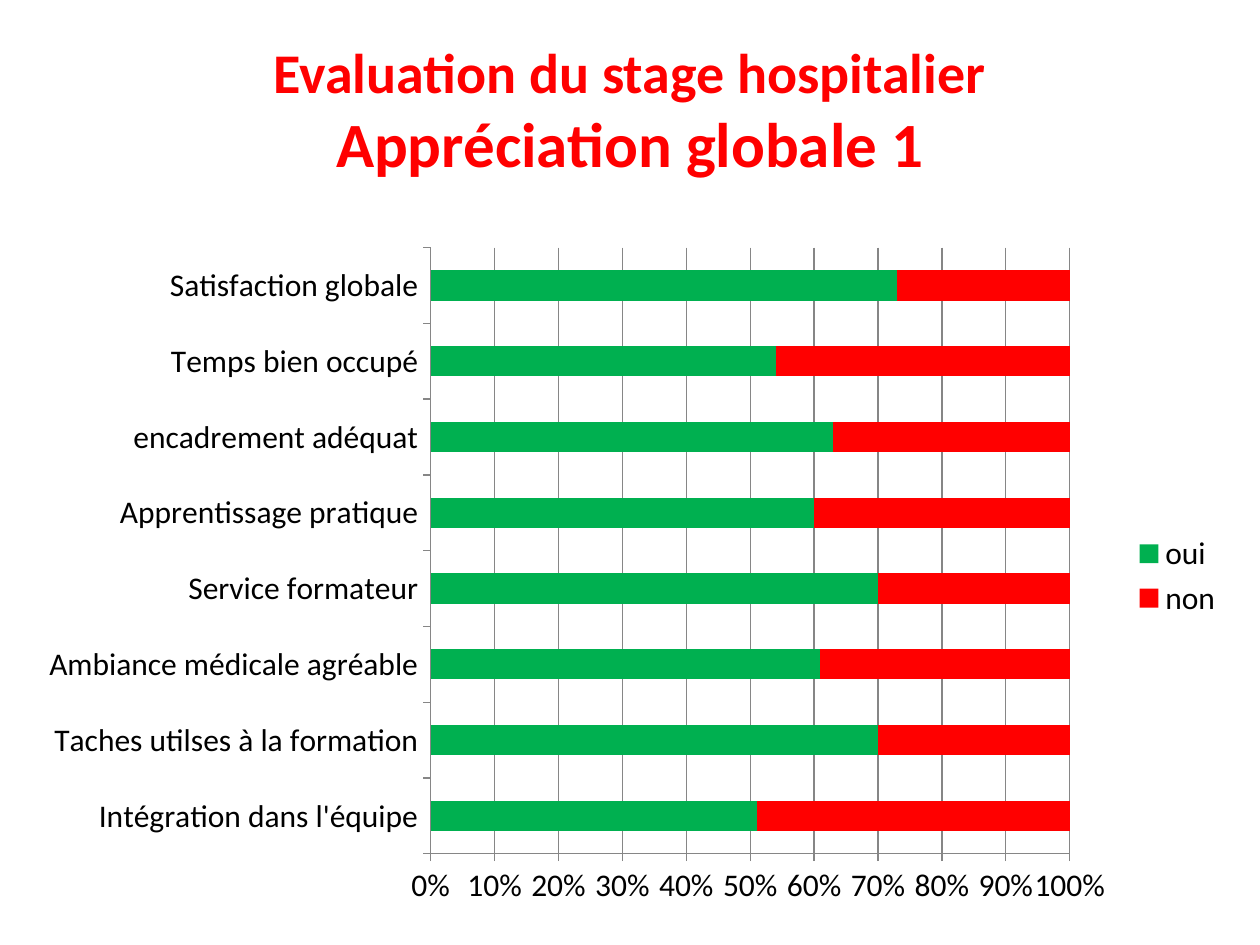
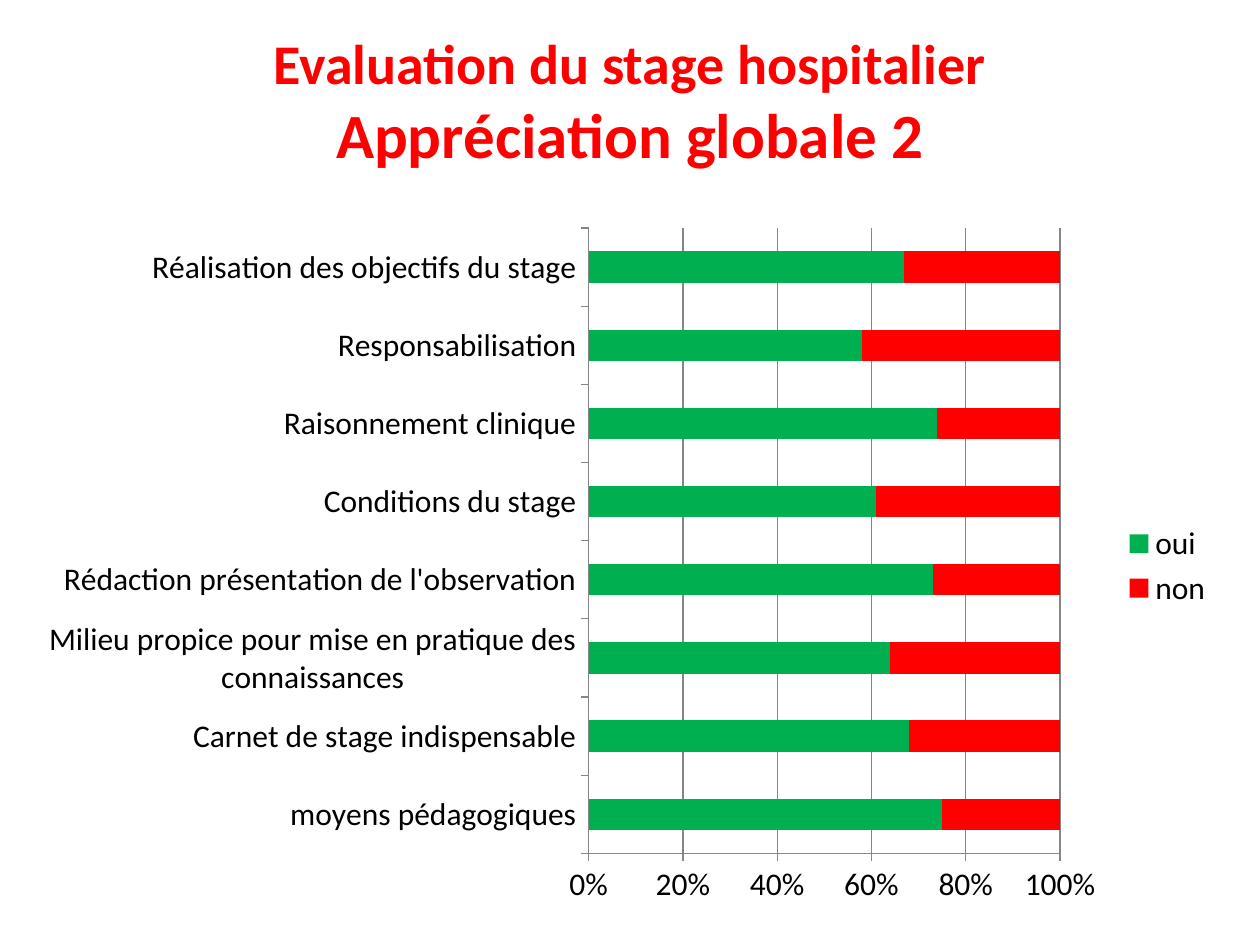
from pptx import Presentation
from pptx import util as u
from pptx.chart.data import CategoryChartData
from pptx.dml.color import RGBColor
from pptx.enum import chart as ch, text as t

PX = 914400 / 126  # EMU per px
FONT = "Calibri"
COLOURS = {"paper": "FFFFFF", "text": "000000", "heading": "FF0000",
           "oui": "00B050", "non": "FF0000", "axis": "868686"}
HEADING = "Evaluation du stage hospitalier"

# Each criterion, from the bottom bar up, with its percentage of "oui".
EVALUATIONS = [
    {"subheading": "Appréciation globale 1",
     "title_box": (0, 3, 1260, 212), "chart_box": (25, 234, 1211, 684), "step": 0.1,
     "oui_by_criterion": {
         "Intégration dans l'équipe": 51,
         "Taches utilses à la formation": 70,
         "Ambiance médicale agréable": 61,
         "Service formateur": 70,
         "Apprentissage pratique": 60,
         "encadrement adéquat": 63,
         "Temps bien occupé": 54,
         "Satisfaction globale": 73}},
    {"subheading": "Appréciation globale 2",
     "title_box": (0, 3, 1260, 193), "chart_box": (25, 214, 1201, 704), "step": 0.2,
     "oui_by_criterion": {
         "moyens pédagogiques": 75,
         "Carnet de stage indispensable": 68,
         "Milieu propice pour mise en pratique des connaissances": 64,
         "Rédaction présentation de l'observation": 73,
         "Conditions du stage": 61,
         "Raisonnement clinique": 74,
         "Responsabilisation": 58,
         "Réalisation des objectifs du stage": 67}},
]


def emu(*lengths):
    return [u.Emu(round(length * PX)) for length in lengths]


def rgb(name):
    return RGBColor.from_string(COLOURS[name])


def format_font(font, size, colour="text", bold=False):
    font.name, font.size, font.bold = FONT, u.Pt(size), bold
    font.color.rgb = rgb(colour)


def add_text(paragraph, wording, **font_format):
    run = paragraph.add_run()
    run.text = wording
    format_font(run.font, **font_format)


def fill_title(title, box, subheading):
    title.left, title.top, title.width, title.height = emu(*box)
    title.fill.solid()
    title.fill.fore_color.rgb = rgb("paper")
    frame = title.text_frame
    frame.word_wrap = True
    frame.auto_size = t.MSO_AUTO_SIZE.NONE
    frame.vertical_anchor = t.MSO_ANCHOR.MIDDLE
    lines = frame.paragraphs[0]
    lines.alignment = t.PP_ALIGN.CENTER
    add_text(lines, HEADING, size=32, colour="heading", bold=True)
    lines.add_line_break()
    add_text(lines, subheading, size=36, colour="heading", bold=True)


def style_axis(axis):
    axis.major_tick_mark = ch.XL_TICK_MARK.OUTSIDE
    axis.minor_tick_mark = ch.XL_TICK_MARK.NONE
    axis.format.line.color.rgb = rgb("axis")
    axis.format.line.width = u.Pt(0.75)


def add_answer_chart(slide, box, oui_by_criterion, step):
    answers = CategoryChartData()
    answers.categories = list(oui_by_criterion)
    answers.add_series("oui", oui_by_criterion.values())
    answers.add_series("non", [100 - oui for oui in oui_by_criterion.values()])
    chart = slide.shapes.add_chart(
        ch.XL_CHART_TYPE.BAR_STACKED_100, *emu(*box), answers).chart
    chart.has_title = False
    format_font(chart.font, size=18)

    bars = chart.plots[0]
    bars.gap_width, bars.overlap, bars.vary_by_categories = 150, 100, False
    for series in bars.series:
        series.format.fill.solid()
        series.format.fill.fore_color.rgb = rgb(series.name)

    style_axis(chart.category_axis)
    percent = chart.value_axis
    style_axis(percent)
    percent.minimum_scale, percent.maximum_scale = 0, 1
    percent.major_unit = step
    percent.has_major_gridlines = True
    percent.major_gridlines.format.line.color.rgb = rgb("axis")
    percent.major_gridlines.format.line.width = u.Pt(0.75)
    percent.tick_labels.number_format = "0%"
    percent.tick_labels.number_format_is_linked = False

    chart.has_legend = True
    chart.legend.position = ch.XL_LEGEND_POSITION.RIGHT
    chart.legend.include_in_layout = False


def add_evaluation_slide(deck, subheading, title_box, chart_box, oui_by_criterion, step):
    slide = deck.slides.add_slide(deck.slide_layouts.get_by_name("Title Only"))
    fill_title(slide.shapes.title, title_box, subheading)
    add_answer_chart(slide, chart_box, oui_by_criterion, step)


def main():
    deck = Presentation()
    deck.slide_width, deck.slide_height = emu(1260, 945)
    for evaluation in EVALUATIONS:
        add_evaluation_slide(deck, **evaluation)
    deck.save("out.pptx")


if __name__ == "__main__":
    main()
